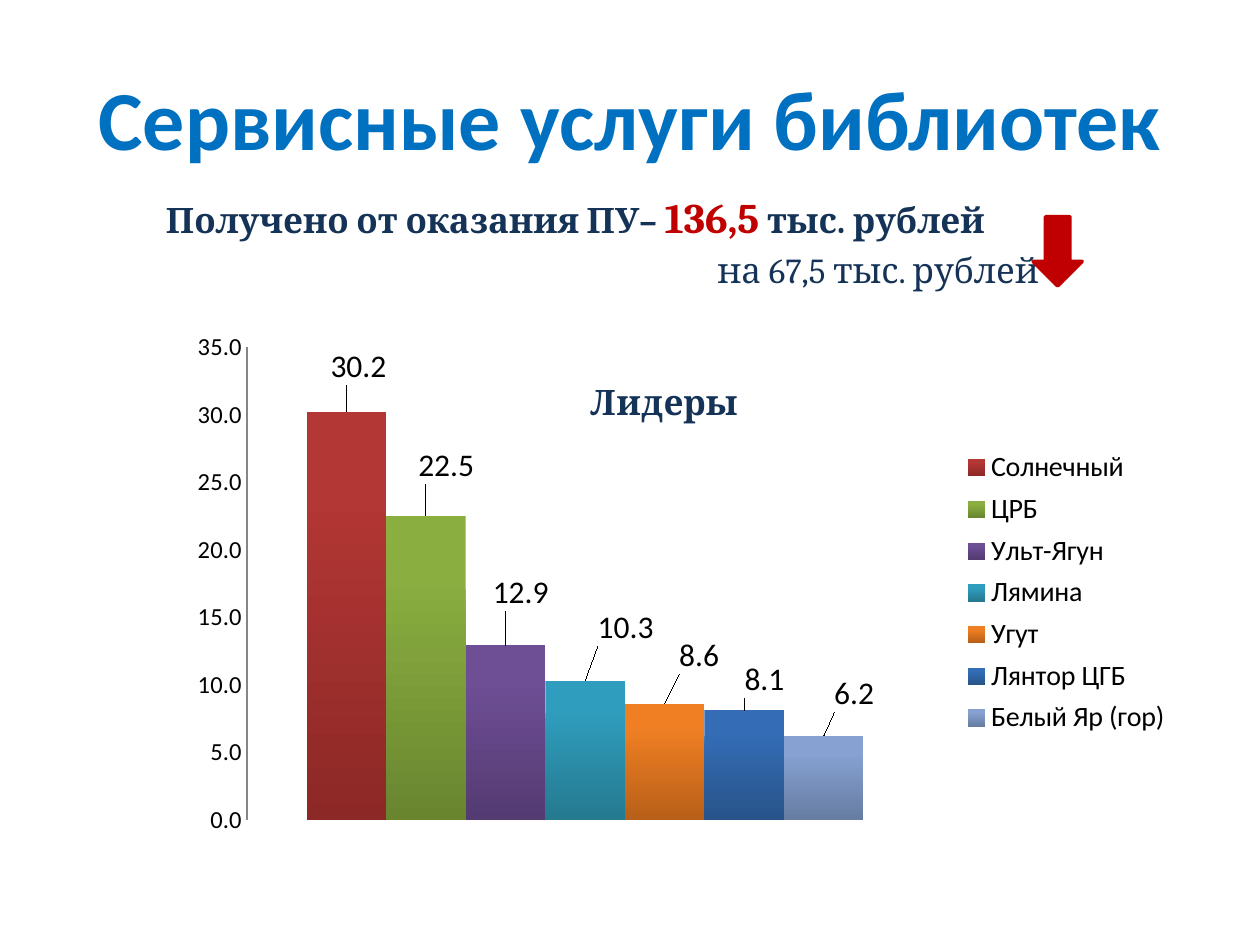
from lxml.etree import SubElement
from pptx import Presentation
from pptx.chart.data import CategoryChartData
from pptx.dml.color import RGBColor
from pptx.enum.chart import XL_CHART_TYPE, XL_LEGEND_POSITION, XL_TICK_MARK
from pptx.enum.shapes import MSO_SHAPE
from pptx.enum.text import MSO_ANCHOR, PP_ALIGN
from pptx.oxml import parse_xml
from pptx.oxml.ns import nsdecls, qn
from pptx.util import Pt

BLUE = RGBColor(0x00, 0x70, 0xC0)
NAVY = RGBColor(0x15, 0x33, 0x57)
RED = RGBColor(0xC0, 0x00, 0x00)
BLACK = RGBColor(0x00, 0x00, 0x00)
GREY = RGBColor(0x86, 0x86, 0x86)

TITLE = "Сервисные услуги библиотек"
INCOME = [
    ("Получено от оказания ПУ– ", 20, NAVY),
    ("136,5", 24, RED),
    (" тыс. рублей", 20, NAVY),
]
CHANGE = "на 67,5 тыс. рублей"
CHART_TITLE = "Лидеры"
# library, income, top colour, bottom colour, label shift as a share of the chart
LEADERS = [
    ("Солнечный", 30.2, "B33734", "8C2826", (0.012, -0.04)),
    ("ЦРБ", 22.5, "8AAE40", "69862F", (0.02, -0.05)),
    ("Ульт-Ягун", 12.9, "6E4E95", "543B72", (0.015, -0.055)),
    ("Лямина", 10.3, "2F9EBE", "257A90", (0.04, -0.055)),
    ("Угут", 8.6, "F07F23", "B86019", (0.034, -0.045)),
    ("Лянтор ЦГБ", 8.1, "346DB6", "28548A", (0.02, -0.013)),
    ("Белый Яр (гор)", 6.2, "86A1D2", "677DA2", (0.03, -0.035)),
]


def set_font(font, size, color, name, bold=False):
    font.size, font.name, font.bold = Pt(size), name, bold
    font.color.rgb = color


def set_layout(parent, index, **values):
    """Give a chart part a manual layout as its child at index."""
    for old in parent.findall(qn("c:layout")):
        parent.remove(old)
    layout = parse_xml(f"<c:layout {nsdecls('c')}><c:manualLayout/></c:layout>")
    for tag, value in values.items():
        SubElement(layout[0], qn(f"c:{tag}")).set("val", str(value))
    parent.insert(index, layout)


def set_indent(p, left, first):
    pPr = p._p.get_or_add_pPr()
    pPr.set("marL", str(Pt(left)))
    pPr.set("indent", str(Pt(first)))


def add_title(slide):
    title = slide.shapes.title
    title.left, title.top, title.width, title.height = Pt(36), Pt(21.6), Pt(648), Pt(90)
    tf = title.text_frame
    tf.text = TITLE
    tf.vertical_anchor = MSO_ANCHOR.MIDDLE
    p = tf.paragraphs[0]
    p.alignment = PP_ALIGN.CENTER
    set_font(p.font, 48, BLUE, "Calibri", True)


def add_chart(slide):
    data = CategoryChartData(number_format="0.0")
    data.categories = ["1"]
    for name, value, *_ in LEADERS:
        data.add_series(name, [value])
    chart = slide.shapes.add_chart(
        XL_CHART_TYPE.COLUMN_CLUSTERED, Pt(95.8), Pt(180), Pt(580.3), Pt(305.3), data
    ).chart
    set_font(chart.font, 10, BLACK, "Calibri")

    tf = chart.chart_title.text_frame
    tf.text = CHART_TITLE
    set_font(tf.paragraphs[0].font, 20, NAVY, "Cambria", True)
    chart.chart_title.include_in_layout = True
    set_layout(chart.chart_title._element, 1,
               xMode="edge", yMode="edge", x=0.41, y=0.11)

    chart.has_legend = True
    legend = chart.legend
    legend.position = XL_LEGEND_POSITION.RIGHT
    legend.include_in_layout = False
    set_font(legend.font, 16, BLACK, "Calibri")
    set_layout(legend._element, 1,
               xMode="edge", yMode="edge", x=0.78, y=0.24, w=0.21, h=0.56)

    set_layout(chart._chartSpace.chart.plotArea, 0, layoutTarget="inner",
               xMode="edge", yMode="edge", x=0.078, y=0.06, w=0.666, h=0.885)
    chart.category_axis.visible = False
    axis = chart.value_axis
    axis.minimum_scale, axis.maximum_scale, axis.major_unit = 0, 35, 5
    axis.has_major_gridlines = False
    axis.major_tick_mark = XL_TICK_MARK.NONE
    axis.tick_labels.number_format = "0.0"
    axis.tick_labels.number_format_is_linked = False
    set_font(axis.tick_labels.font, 14, BLACK, "Calibri")
    axis.format.line.color.rgb = GREY
    axis.format.line.width = Pt(0.75)

    plot = chart.plots[0]
    plot.gap_width, plot.overlap = 150, 0
    plot.vary_by_categories = False
    for series, (_, _, top, bottom, (dx, dy)) in zip(plot.series, LEADERS):
        fill = series.format.fill
        fill.gradient()
        fill.gradient_angle = 270
        for stop, color, position in zip(fill.gradient_stops, (top, bottom), (0.2, 1)):
            stop.color.rgb = RGBColor.from_string(color)
            stop.position = position
        labels = series.data_labels
        labels.show_value = True
        labels.number_format = "0.0"
        labels.number_format_is_linked = False
        set_font(labels.font, 18, BLACK, "Calibri")
        label = series.points[0].data_label
        set_font(label.font, 18, BLACK, "Calibri")
        set_layout(labels._element.find(qn("c:dLbl")), 1, x=dx, y=dy)


def add_income(slide):
    tf = slide.shapes.add_textbox(Pt(87.8), Pt(105.8), Pt(528.5), Pt(74.2)).text_frame
    tf.word_wrap = True
    p = tf.paragraphs[0]
    set_indent(p, 27, -27)
    for text, size, color in INCOME:
        r = p.add_run()
        r.text = text
        set_font(r.font, size, color, "Cambria", True)
    p = tf.add_paragraph()
    p.text = CHANGE
    p.space_before = Pt(4)
    set_indent(p, 315, 0)
    set_font(p.font, 20, NAVY, "Cambria")


def add_arrow(slide):
    sp = slide.shapes.add_shape(MSO_SHAPE.DOWN_ARROW, Pt(590.4), Pt(123.8), Pt(28), Pt(39.6))
    sp.shadow.inherit = False
    sp.fill.solid()
    sp.fill.fore_color.rgb = RED
    sp.line.color.rgb = RED
    sp.line.width = Pt(2)


def main():
    prs = Presentation()
    prs.slide_width, prs.slide_height = Pt(720), Pt(540)
    slide = prs.slides.add_slide(prs.slide_layouts[5])
    add_title(slide)
    add_chart(slide)
    add_income(slide)
    add_arrow(slide)
    prs.save("out.pptx")


if __name__ == "__main__":
    main()
